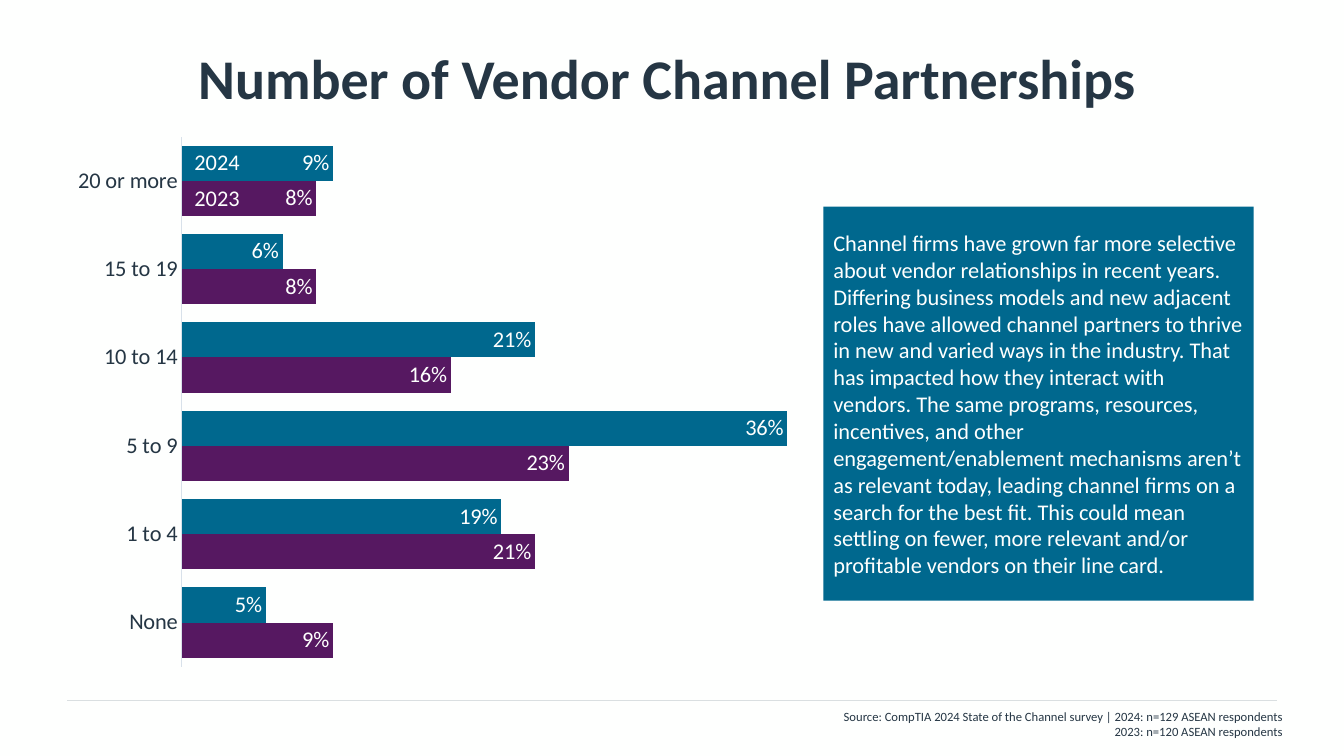
import copy
from dataclasses import dataclass

import pptx
import pptx.chart.data
import pptx.dml.color
import pptx.enum.chart
import pptx.enum.shapes
import pptx.enum.text
import pptx.oxml
import pptx.oxml.ns
import pptx.util

Pt = pptx.util.Pt
RGB = pptx.dml.color.RGBColor.from_string
ALIGN = pptx.enum.text.PP_ALIGN
ANCHOR = pptx.enum.text.MSO_ANCHOR
AUTO_SIZE = pptx.enum.text.MSO_AUTO_SIZE


@dataclass(frozen=True)
class Theme:
    font: str = "Calibri"
    background: str = "FEFFFE"
    ink: str = "253644"
    teal: str = "00688E"
    purple: str = "561861"
    rule: str = "DADFE1"
    axis: str = "D8E1EA"
    title_size: float = 40
    body_size: float = 16
    source_size: float = 9


theme = Theme()


def format_font(font, size, color, bold=False):
    values = {"name": theme.font, "size": Pt(size), "bold": bold}
    for name, value in values.items():
        setattr(font, name, value)
    font.color.rgb = RGB(color)


def write_text(shape, text, size, color, align=ALIGN.LEFT, bold=False, **frame_values):
    """Fill a shape with one paragraph; frame_values are text frame attributes."""
    for name, value in frame_values.items():
        setattr(shape.text_frame, name, value)
    paragraph = shape.text_frame.paragraphs[0]
    paragraph.text = text
    paragraph.alignment = align
    for run in paragraph.runs:
        format_font(run.font, size, color, bold)
    for line_break in paragraph._p.findall(pptx.oxml.ns.qn("a:br")):
        line_break.append(copy.deepcopy(paragraph.runs[0]._r.rPr))
    return paragraph


presentation = pptx.Presentation()
presentation.slide_width = Pt(960)
presentation.slide_height = Pt(540)
slide = presentation.slides.add_slide(presentation.slide_layouts[5])
slide.background.fill.solid()
slide.background.fill.fore_color.rgb = RGB(theme.background)

# Footer rule
rule = slide.shapes.add_connector(
    pptx.enum.shapes.MSO_CONNECTOR.STRAIGHT, Pt(48), Pt(500.4), Pt(912), Pt(500.4))
rule.line.color.rgb = RGB(theme.rule)
rule.line.width = Pt(0.5)
rule._element.spPr.append(pptx.oxml.parse_xml(
    f"<a:effectLst {pptx.oxml.ns.nsdecls('a')}/>"))

# Title
title = slide.shapes.title
title_box = {"left": 48, "top": 10, "width": 864, "height": 90}
for name, value in title_box.items():
    setattr(title, name, Pt(value))
write_text(title, "Number of Vendor Channel Partnerships", theme.title_size, theme.ink,
           ALIGN.CENTER, True, auto_size=AUTO_SIZE.NONE, word_wrap=True,
           vertical_anchor=ANCHOR.MIDDLE, margin_left=0)

# Partnership chart
chart_data = pptx.chart.data.CategoryChartData(number_format="0%")
chart_data.categories = ["None", "1 to 4", "5 to 9", "10 to 14", "15 to 19", "20 or more"]
chart_data.add_series("Series 1", (0.09, 0.21, 0.23, 0.16, 0.08, 0.08))
chart_data.add_series("Series 2", (0.05, 0.19, 0.36, 0.21, 0.06, 0.09))
chart = slide.shapes.add_chart(
    pptx.enum.chart.XL_CHART_TYPE.BAR_CLUSTERED,
    Pt(43.2), Pt(97.2), Pt(555), Pt(379.5), chart_data).chart
chart.has_legend = False
chart.has_title = False
format_font(chart.font, 10, theme.ink)

category_axis = chart.category_axis
category_axis.major_tick_mark = pptx.enum.chart.XL_TICK_MARK.NONE
category_axis.format.line.color.rgb = RGB(theme.axis)
category_axis.format.line.width = Pt(0.75)
format_font(category_axis.tick_labels.font, theme.body_size, theme.ink)

axis_values = {"minimum_scale": 0, "maximum_scale": 0.38,
               "has_major_gridlines": False, "visible": False}
for name, value in axis_values.items():
    setattr(chart.value_axis, name, value)

plot = chart.plots[0]
plot.gap_width = 51
plot.overlap = 0
plot.vary_by_categories = False
for series, color in zip(plot.series, (theme.purple, theme.teal)):
    series.format.fill.solid()
    series.format.fill.fore_color.rgb = RGB(color)
    series.invert_if_negative = False
    labels = series.data_labels
    label_values = {"show_value": True, "number_format": "0%",
                    "number_format_is_linked": False,
                    "position": pptx.enum.chart.XL_LABEL_POSITION.INSIDE_END}
    for name, value in label_values.items():
        setattr(labels, name, value)
    format_font(labels.font, theme.body_size, theme.background)

plot_area = chart._chartSpace.chart.plotArea
for layout in plot_area.findall(pptx.oxml.ns.qn("c:layout")):
    plot_area.remove(layout)
plot_area.insert(0, pptx.oxml.parse_xml(
    f"<c:layout {pptx.oxml.ns.nsdecls('c')}><c:manualLayout>"
    '<c:layoutTarget val="inner"/><c:xMode val="edge"/><c:yMode val="edge"/>'
    '<c:x val="0.156"/><c:y val="0"/><c:w val="0.823"/><c:h val="1"/>'
    "</c:manualLayout></c:layout>"))

# Source
source = slide.shapes.add_textbox(Pt(455.8), Pt(502.6), Pt(467.3), Pt(28.8))
write_text(source,
           "Source: CompTIA 2024 State of the Channel survey | 2024: n=129 ASEAN respondents\n"
           "2023: n=120 ASEAN respondents",
           theme.source_size, theme.ink, ALIGN.RIGHT, word_wrap=True,
           auto_size=AUTO_SIZE.SHAPE_TO_FIT_TEXT)

# Year labels on the top pair of bars
for index, year in enumerate(("2024", "2023")):
    year_label = slide.shapes.add_textbox(
        Pt(131.8), Pt(102.2 + 26 * index), Pt(47.5), Pt(26.6))
    write_text(year_label, year, theme.body_size, theme.background,
               word_wrap=False, auto_size=AUTO_SIZE.SHAPE_TO_FIT_TEXT)

# Commentary
commentary = slide.shapes.add_shape(
    pptx.enum.shapes.MSO_SHAPE.RECTANGLE, Pt(588.2), Pt(147.6), Pt(307.4), Pt(281.5))
commentary.shadow.inherit = False
commentary.fill.solid()
commentary.fill.fore_color.rgb = RGB(theme.teal)
commentary.line.fill.background()
commentary_paragraph = write_text(
    commentary,
    "Channel firms have grown far more selective about vendor relationships in recent "
    "years. Differing business models and new adjacent roles have allowed channel "
    "partners to thrive in new and varied ways in the industry. That has impacted how "
    "they interact with vendors. The same programs, resources, incentives, and other "
    "engagement/enablement mechanisms aren’t as relevant today, leading channel firms "
    "on a search for the best fit. This could mean settling on fewer, more relevant "
    "and/or profitable vendors on their line card.",
    theme.body_size, theme.background, word_wrap=True, vertical_anchor=ANCHOR.MIDDLE)
commentary_paragraph.space_after = Pt(10)

presentation.save("out.pptx")
